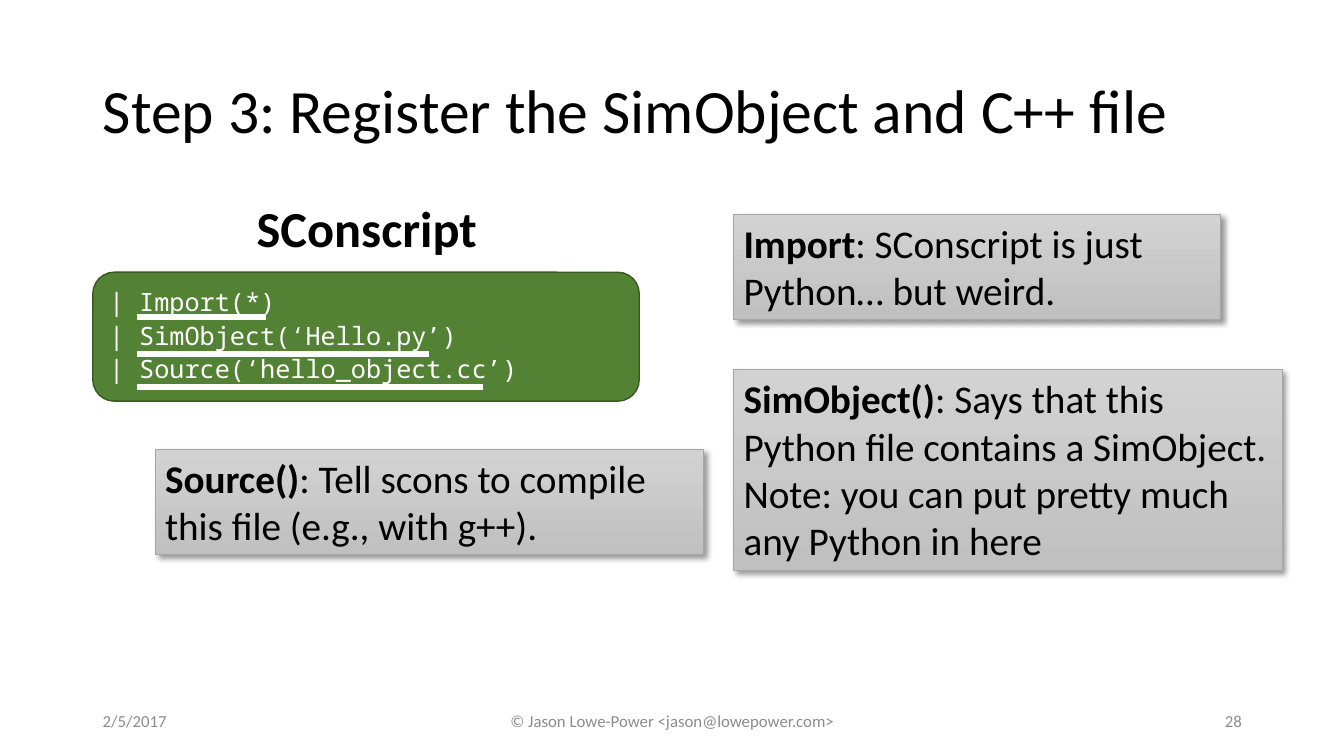
from lxml import etree
from pptx import Presentation
from pptx.dml.color import RGBColor
from pptx.enum.shapes import MSO_CONNECTOR, MSO_SHAPE
from pptx.enum.text import MSO_ANCHOR, MSO_AUTO_SIZE, PP_ALIGN
from pptx.oxml import parse_xml
from pptx.oxml.ns import nsdecls, qn
from pptx.util import Cm, Pt

LEFT, CENTER, RIGHT = PP_ALIGN.LEFT, PP_ALIGN.CENTER, PP_ALIGN.RIGHT
TOP, MIDDLE = MSO_ANCHOR.TOP, MSO_ANCHOR.MIDDLE
RECTANGLE, ROUNDED = MSO_SHAPE.RECTANGLE, MSO_SHAPE.ROUNDED_RECTANGLE
STRAIGHT = MSO_CONNECTOR.STRAIGHT
FIT_SHAPE, NO_FIT = MSO_AUTO_SIZE.SHAPE_TO_FIT_TEXT, MSO_AUTO_SIZE.NONE
TITLE_ONLY_LAYOUT = 5

COLORS = {
    "text": "000000",
    "footer": "8C8C8C",
    "white": "FFFFFF",
    "code_fill": "548235",
    "code_line": "385723",
    "note_top": "D2D2D2",
    "note_bottom": "C0C0C0",
    "note_line": "A5A5A5",
}
FORMATS = {
    "title": {"name": "Calibri", "size": Pt(44), "bold": False},
    "heading": {"name": "Calibri", "size": Pt(36), "bold": True},
    "note": {"name": "Calibri", "size": Pt(28), "bold": False},
    "note_term": {"name": "Calibri", "size": Pt(28), "bold": True},
    "code": {"name": "Noto Sans Mono", "size": Pt(18), "bold": False},
    "footer": {"name": "Calibri", "size": Pt(12), "bold": False},
}
CODE_LINES = ["| Import(*)", "| SimObject(‘Hello.py’)", "| Source(‘hello_object.cc’)"]
UNDERLINE_LEFT = 3.45
UNDERLINES = [(7.98, 3.25), (8.92, 7.37), (9.75, 8.71)]  # top, length
NOTES = [
    ("Import", ": SConscript is just Python… but weird.", (18.49, 5.41, 12.27, 2.64)),
    ("SimObject()", ": Says that this Python file contains a SimObject. "
     "Note: you can put pretty much any Python in here", (18.49, 9.32, 13.82, 5.05)),
    ("Source()", ": Tell scons to compile this file (e.g., with g++).",
     (3.91, 11.33, 13.82, 2.64)),
]
FOOTERS = [
    ("2/5/2017", 2.34, 7.62, LEFT),
    ("© Jason Lowe-Power <jason@lowepower.com>", 11.23, 11.43, CENTER),
    ("28", 23.93, 7.62, RIGHT),
]


def color(name):
    return RGBColor.from_string(COLORS[name])


def lengths(box):
    return [Cm(value) for value in box]


def add_run(paragraph, text, style, color_name="text"):
    run = paragraph.add_run()
    run.text = text
    for attribute, value in FORMATS[style].items():
        setattr(run.font, attribute, value)
    run.font.color.rgb = color(color_name)


def format_frame(frame, **values):
    for attribute, value in values.items():
        setattr(frame, attribute, value)


def add_title(slide, text):
    title = slide.shapes.title
    title.left, title.top, title.width, title.height = lengths((2.34, 1.01, 27.43, 3.68))
    format_frame(title.text_frame, vertical_anchor=MIDDLE, word_wrap=True, auto_size=NO_FIT)
    paragraph = title.text_frame.paragraphs[0]
    paragraph.alignment = LEFT
    paragraph.line_spacing = 0.9
    add_run(paragraph, text, "title")


def add_label(slide, text, box, style, color_name="text", alignment=LEFT, **frame_values):
    label = slide.shapes.add_textbox(*lengths(box))
    format_frame(label.text_frame, **frame_values)
    paragraph = label.text_frame.paragraphs[0]
    paragraph.alignment = alignment
    add_run(paragraph, text, style, color_name)


def add_code(slide, lines, box):
    shape = slide.shapes.add_shape(ROUNDED, *lengths(box))
    shape.shadow.inherit = False
    shape.fill.solid()
    shape.fill.fore_color.rgb = color("code_fill")
    shape.line.color.rgb = color("code_line")
    shape.line.width = Pt(1)
    frame = shape.text_frame
    format_frame(frame, word_wrap=True, vertical_anchor=TOP, margin_left=Cm(0.25),
                 margin_right=Cm(0.13), margin_top=Cm(0.13), margin_bottom=Cm(0.13))
    for index, line in enumerate(lines):
        paragraph = frame.add_paragraph() if index else frame.paragraphs[0]
        paragraph.alignment = LEFT
        paragraph.line_spacing = 1.1
        add_run(paragraph, line, "code", "white")


def add_underline(slide, top, length):
    line = slide.shapes.add_connector(
        STRAIGHT, *lengths((UNDERLINE_LEFT, top, UNDERLINE_LEFT + length, top)))
    line.line.color.rgb = color("white")
    line.line.width = Pt(4.5)
    etree.SubElement(line._element.spPr, qn("a:effectLst"))


def add_shadow(shape):
    """Cast a soft black shadow down and to the right."""
    shape._element.spPr.append(parse_xml(
        f'<a:effectLst {nsdecls("a")}>'
        f'<a:outerShdw blurRad="{Pt(4)}" dist="{Pt(3)}" dir="2700000" algn="tl" rotWithShape="0">'
        '<a:srgbClr val="000000"><a:alpha val="40000"/></a:srgbClr>'
        '</a:outerShdw></a:effectLst>'))


def add_note(slide, term, explanation, box):
    shape = slide.shapes.add_shape(RECTANGLE, *lengths(box))
    shape.fill.gradient()
    shape.fill.gradient_angle = 270
    for stop, name in zip(shape.fill.gradient_stops, ("note_top", "note_bottom")):
        stop.color.rgb = color(name)
    shape.line.color.rgb = color("note_line")
    shape.line.width = Pt(0.5)
    add_shadow(shape)
    format_frame(shape.text_frame, word_wrap=True, vertical_anchor=TOP, auto_size=FIT_SHAPE)
    paragraph = shape.text_frame.paragraphs[0]
    paragraph.alignment = LEFT
    add_run(paragraph, term, "note_term")
    add_run(paragraph, explanation, "note")


def main():
    presentation = Presentation()
    presentation.slide_width, presentation.slide_height = Cm(33.87), Cm(19.05)
    slide = presentation.slides.add_slide(presentation.slide_layouts[TITLE_ONLY_LAYOUT])
    add_title(slide, "Step 3: Register the SimObject and C++ file")
    for text, left, width, alignment in FOOTERS:
        add_label(slide, text, (left, 17.65, width, 1.02), "footer", "footer", alignment,
                  word_wrap=True, vertical_anchor=MIDDLE)
    add_code(slide, CODE_LINES, (2.34, 6.86, 13.77, 3.25))
    add_label(slide, "SConscript", (6.22, 4.85, 6.12, 1.8), "heading",
              word_wrap=False, auto_size=FIT_SHAPE)
    for top, length in UNDERLINES:
        add_underline(slide, top, length)
    for term, explanation, box in NOTES:
        add_note(slide, term, explanation, box)
    presentation.save("out.pptx")


if __name__ == "__main__":
    main()
